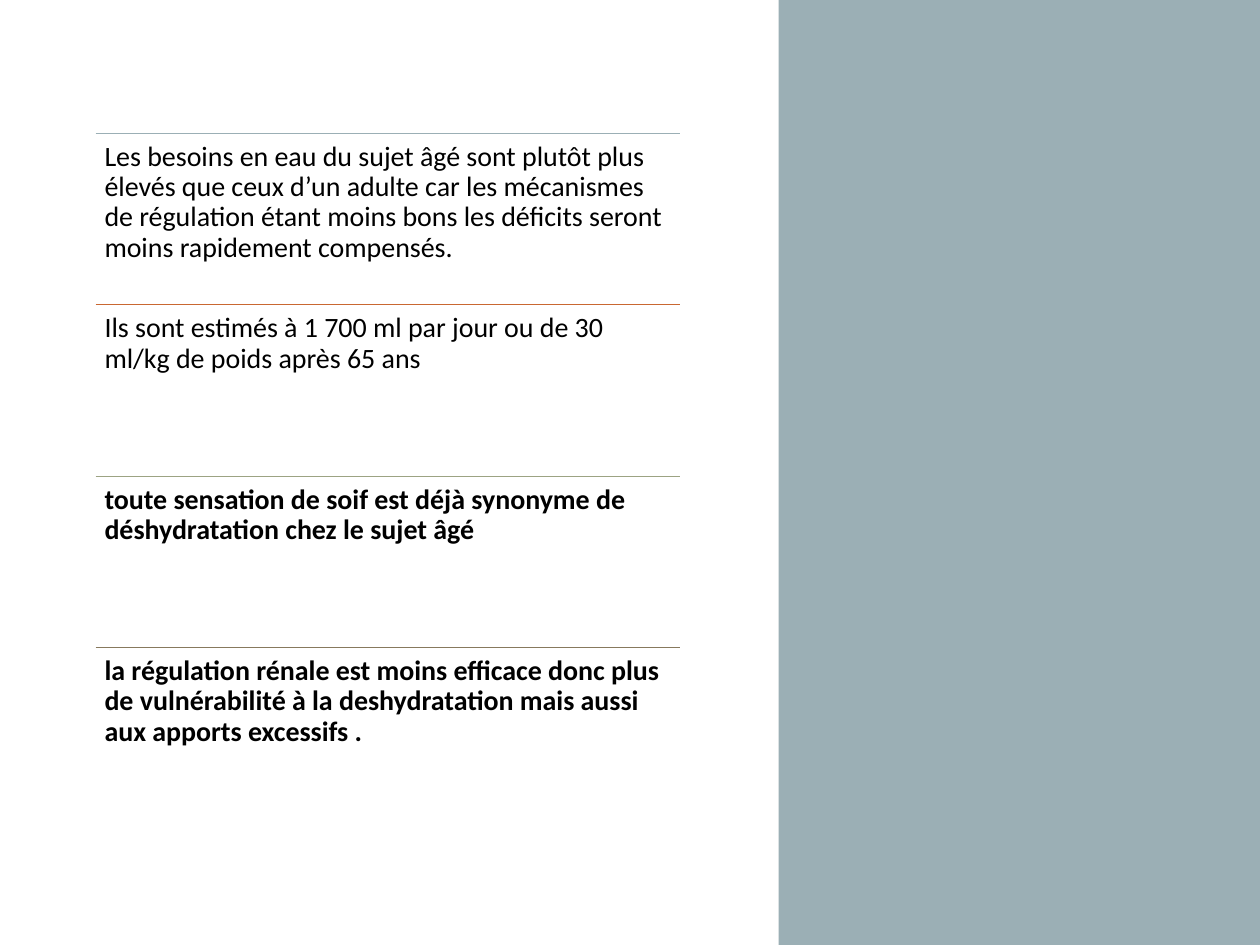
"""Build a slide on the water needs of elderly people."""
from dataclasses import dataclass

from lxml.etree import SubElement
from pptx import Presentation
from pptx.dml.color import RGBColor
from pptx.enum.shapes import MSO_CONNECTOR, MSO_SHAPE
from pptx.enum.text import MSO_ANCHOR, PP_ALIGN
from pptx.oxml.ns import qn
from pptx.util import Inches, Pt


@dataclass(frozen=True)
class Theme:
    font: str = "Calibri"
    body: int = 16
    rule: float = 0.5
    text: str = "000000"
    panel: str = "9BAFB5"
    orange: str = "C96731"
    green: str = "9CA383"
    brown: str = "87795D"


theme = Theme()


def add_text(s, text, left, top, width, height, *, size=theme.body, bold=False,
             color=theme.text, inset=0.07):
    sp = s.shapes.add_textbox(Inches(left), Inches(top), Inches(width), Inches(height))
    tf = sp.text_frame
    tf.word_wrap = True
    tf.vertical_anchor = MSO_ANCHOR.TOP
    tf.margin_left = tf.margin_right = tf.margin_top = tf.margin_bottom = Inches(inset)
    p = tf.paragraphs[0]
    p.alignment = PP_ALIGN.LEFT
    p.line_spacing = 0.9
    r = p.add_run()
    r.text = text
    r.font.name = theme.font
    r.font.size = Pt(size)
    r.font.bold = bold
    r.font.color.rgb = RGBColor.from_string(color)


def add_rule(s, left, top, width, color):
    line = s.shapes.add_connector(MSO_CONNECTOR.STRAIGHT, Inches(left), Inches(top),
                                  Inches(left + width), Inches(top))
    line.line.color.rgb = RGBColor.from_string(color)
    line.line.width = Pt(theme.rule)
    SubElement(line._element.spPr, qn("a:effectLst"))


prs = Presentation()
prs.slide_width, prs.slide_height = Inches(10), Inches(7.5)
s = prs.slides.add_slide(prs.slide_layouts[6])

panel = s.shapes.add_shape(MSO_SHAPE.RECTANGLE, Inches(6.18), 0, Inches(3.82), Inches(7.5))
panel.shadow.inherit = False
panel.fill.solid()
panel.fill.fore_color.rgb = RGBColor.from_string(theme.panel)
panel.line.fill.background()

left, top, width, row_height = 0.76, 1.06, 4.64, 1.36
rows = [
    ("Les besoins en eau du sujet âgé sont plutôt plus élevés que ceux d’un adulte "
     "car les mécanismes de régulation étant moins bons les déficits seront moins "
     "rapidement compensés.", theme.panel, False),
    ("Ils sont estimés à 1 700 ml par jour ou de 30 ml/kg de poids après 65 ans",
     theme.orange, False),
    ("toute sensation de soif est déjà synonyme de déshydratation chez le sujet âgé",
     theme.green, True),
    ("la régulation rénale est moins efficace donc plus de vulnérabilité à la "
     "deshydratation mais aussi aux apports excessifs .", theme.brown, True),
]
for i, (text, color, bold) in enumerate(rows):
    y = top + i * row_height
    add_rule(s, left, y, width, color)
    add_text(s, text, left, y, width, row_height, bold=bold)

prs.save("out.pptx")
